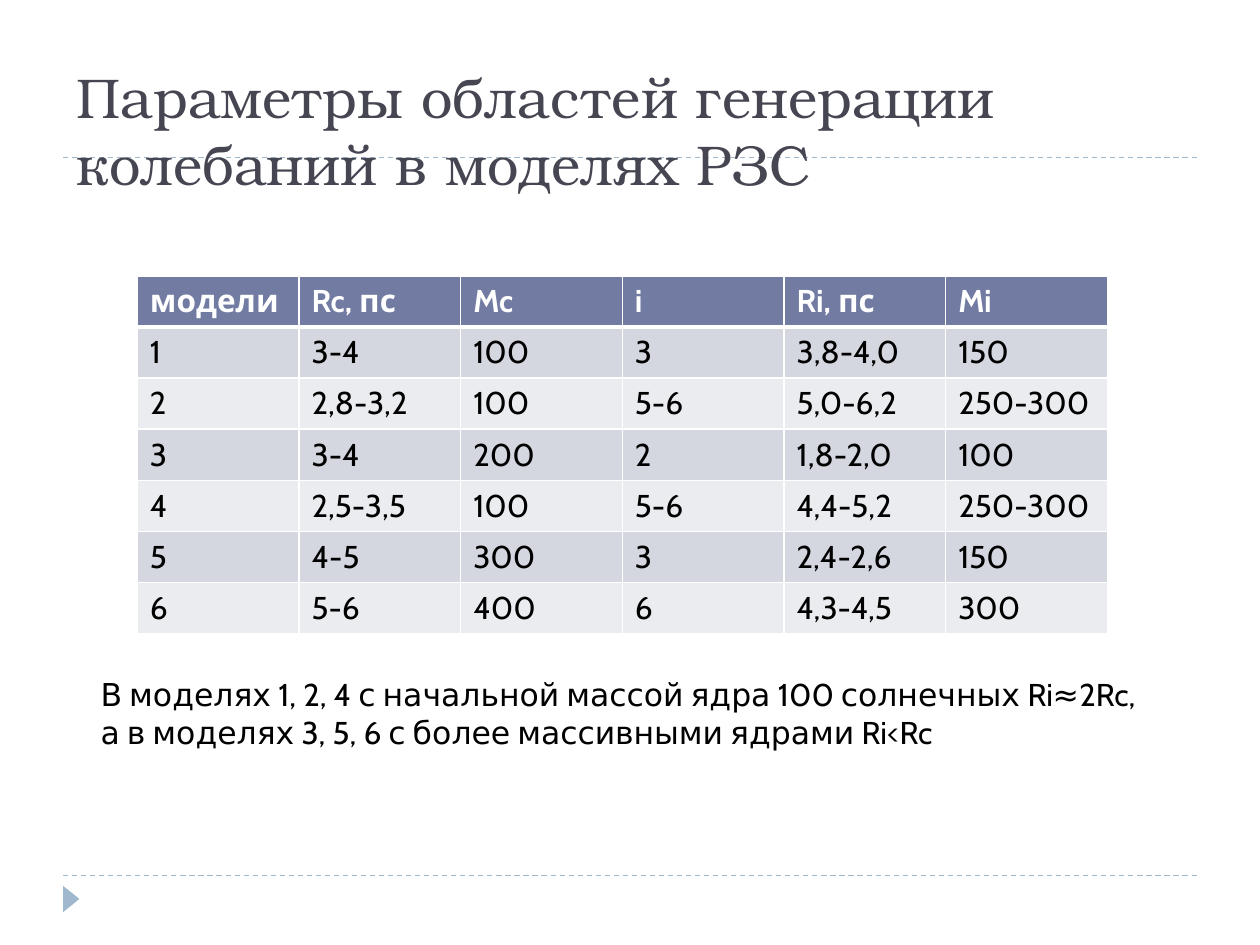
from lxml import etree
from pptx import Presentation
from pptx.dml.color import RGBColor
from pptx.enum.dml import MSO_LINE
from pptx.enum.shapes import MSO_CONNECTOR, MSO_SHAPE
from pptx.enum.text import MSO_ANCHOR
from pptx.oxml.ns import qn
from pptx.util import Emu, Inches, Pt

STRAIGHT = MSO_CONNECTOR.STRAIGHT
TRIANGLE = MSO_SHAPE.ISOSCELES_TRIANGLE
DASH = MSO_LINE.DASH
TOP, BOTTOM = MSO_ANCHOR.TOP, MSO_ANCHOR.BOTTOM

# The slide is a grid of 100 columns by 75 rows of square cells
COLS, ROWS = 100, 75
CELL = Inches(0.1)

COLORS = {
    "title": "464653",
    "accent": "9FB8CD",
    "header": "727CA3",
    "odd": "D5D7E0",
    "even": "EBECF0",
    "white": "FFFFFF",
    "black": "000000",
}
HEADING_FONT, BODY_FONT = "TeX Gyre Bonum", "Cabin"

TITLE = "Параметры областей генерации колебаний в моделях РЗС"
NOTE = ("В моделях 1, 2, 4 с начальной массой ядра 100 солнечных Ri≈2Rc, "
        "а в моделях 3, 5, 6 с более массивными ядрами Ri<Rc")
MODELS = [
    ["модели", "Rc, пс", "Mc", "i", "Ri, пс", "Mi"],
    ["1", "3-4", "100", "3", "3,8-4,0", "150"],
    ["2", "2,8-3,2", "100", "5-6", "5,0-6,2", "250-300"],
    ["3", "3-4", "200", "2", "1,8-2,0", "100"],
    ["4", "2,5-3,5", "100", "5-6", "4,4-5,2", "250-300"],
    ["5", "4-5", "300", "3", "2,4-2,6", "150"],
    ["6", "5-6", "400", "6", "4,3-4,5", "300"],
]


def grid(*cells):
    return [Emu(round(n * CELL)) for n in cells]


def rgb(name):
    return RGBColor.from_string(COLORS[name])


def write(tf, text, size=18, font=BODY_FONT, color="black", bold=False):
    r = tf.paragraphs[0].add_run()
    r.text = text
    r.font.size, r.font.name, r.font.bold = Pt(size), font, bold
    r.font.color.rgb = rgb(color)


def add_text(s, box, text, anchor=TOP, **style):
    tf = s.shapes.add_textbox(*grid(*box)).text_frame
    tf.word_wrap = True
    tf.vertical_anchor = anchor
    write(tf, text, **style)


def add_rule(s, left, right, y):
    line = s.shapes.add_connector(STRAIGHT, *grid(left, y, right, y))
    line.line.color.rgb = rgb("accent")
    line.line.width = Pt(0.75)
    line.line.dash_style = DASH
    etree.SubElement(line._element.spPr, qn("a:effectLst"))


def add_frame(s, box):
    """Two dashed rules and the corner marker."""
    left, top, width, height = box
    for y in (top, top + height):
        add_rule(s, left, left + width, y)
    sp = s.shapes.add_shape(TRIANGLE, *grid(left - 0.4, top + height + 1.2, 2.1, 1.3))
    sp.rotation = 90
    sp.shadow.inherit = False
    sp.fill.solid()
    sp.fill.fore_color.rgb = rgb("accent")
    sp.line.fill.background()


def set_borders(cell, bottom=1, top=1):
    """Borders go ahead of the fill, so call this before filling the cell."""
    tcPr = cell._tc.get_or_add_tcPr()
    for side, width in (("L", 1), ("R", 1), ("T", top), ("B", bottom)):
        ln = etree.SubElement(tcPr, qn(f"a:ln{side}"), w=str(Pt(width)))
        fill = etree.SubElement(ln, qn("a:solidFill"))
        etree.SubElement(fill, qn("a:srgbClr"), val=COLORS["white"])


def add_models_table(s, box, data):
    table = s.shapes.add_table(len(data), len(data[0]), *grid(*box)).table
    for i, values in enumerate(data):
        header = i == 0
        fill = "header" if header else "odd" if i % 2 else "even"
        for j, text in enumerate(values):
            cell = table.cell(i, j)
            set_borders(cell, bottom=3 if header else 1, top=3 if i == 1 else 1)
            cell.fill.solid()
            cell.fill.fore_color.rgb = rgb(fill)
            write(cell.text_frame, text, bold=header,
                  color="white" if header else "black")


def main():
    prs = Presentation()
    prs.slide_width, prs.slide_height = grid(COLS, ROWS)
    s = prs.slides.add_slide(prs.slide_layouts[6])

    add_frame(s, (5, 12.5, 90, 57))
    # Heading
    add_text(s, (5.1, 3.6, 90.8, 12.5), TITLE, anchor=BOTTOM,
             size=32, font=HEADING_FONT, color="title")
    # Model parameters and conclusion
    add_models_table(s, (10.9, 21.9, 77, 28.4), MODELS)
    add_text(s, (7, 53.1, 85.2, 7.1), NOTE)

    prs.save("out.pptx")


if __name__ == "__main__":
    main()
